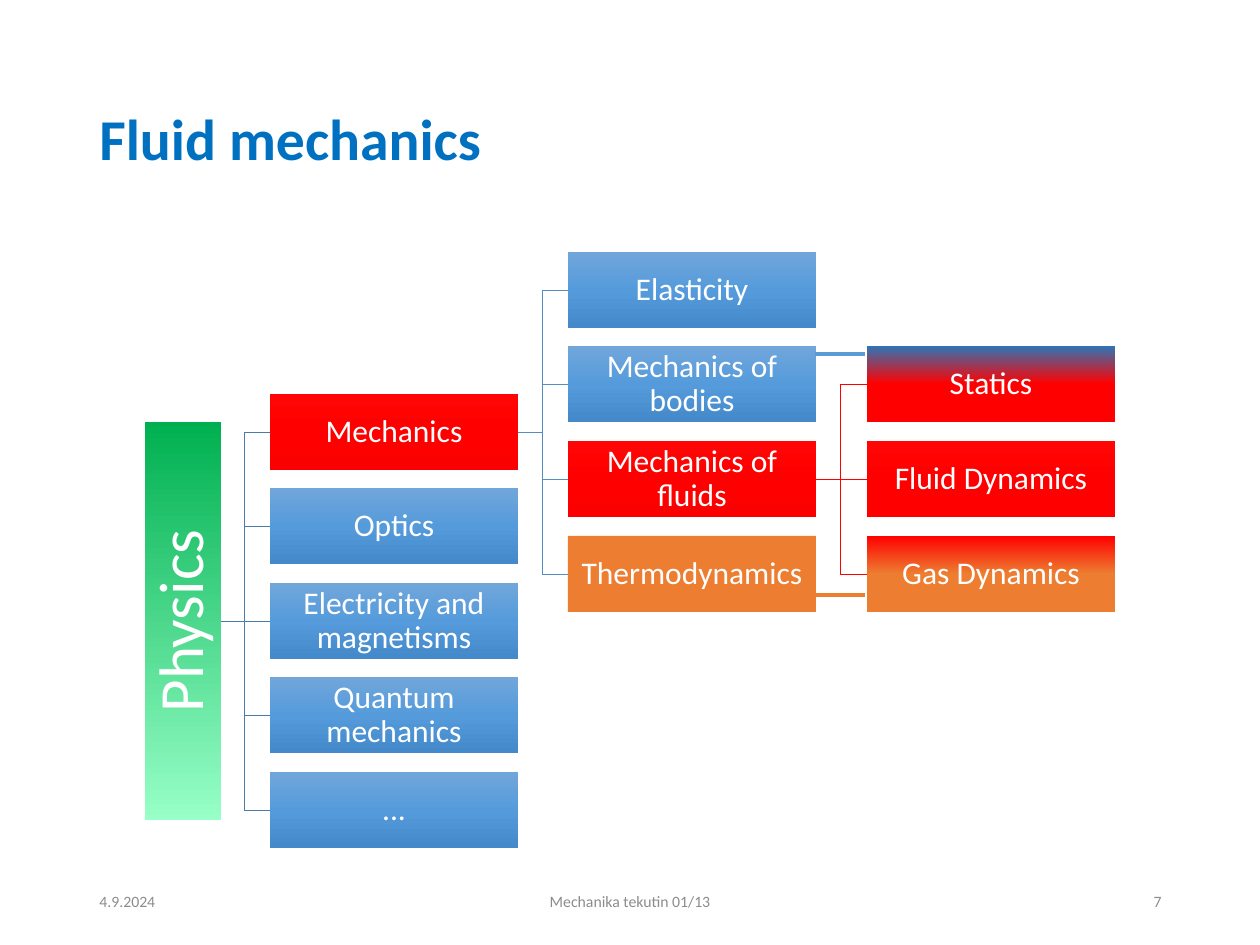
import pptx
import pptx.dml.color
import pptx.enum.shapes
import pptx.enum.text
import pptx.oxml.ns
import pptx.util
from lxml import etree

EMU_PER_PX = 914400 / 126
BOX_WIDTH, BOX_HEIGHT = 248, 76
BLUE = ["71A6DB", "559BDB", "448ACA"]
RED = ["FF0505", "FF0000", "FA0000"]
ORANGE = ["ED7D31"]
ALIGN = pptx.enum.text.PP_ALIGN


def px(length):
    return pptx.util.Emu(round(length * EMU_PER_PX))


def color(code):
    return pptx.dml.color.RGBColor.from_string(code)


def write(frame, text, size=18, ink="FFFFFF", bold=False, align=ALIGN.CENTER,
          spacing=0.9, inset=None):
    frame.word_wrap = True
    frame.vertical_anchor = pptx.enum.text.MSO_ANCHOR.MIDDLE
    if inset is not None:
        frame.margin_left = frame.margin_right = px(inset)
        frame.margin_top = frame.margin_bottom = px(inset)
    para = frame.paragraphs[0]
    para.alignment = align
    para.line_spacing = spacing
    span = para.add_run()
    span.text = text
    span.font.name = "Calibri"
    span.font.size = pptx.util.Pt(size)
    span.font.bold = bold
    span.font.color.rgb = color(ink)


def column_left(column):
    return 270 + 597 * column // 2


def row_top(row):
    return 252 + round(94.5 * row)


class TreePage:
    def __init__(self, page):
        self.page = page

    def text(self, left, top, width, height, text, **style):
        box = self.page.shapes.add_textbox(px(left), px(top), px(width), px(height))
        write(box.text_frame, text, **style)

    def box(self, left, top, width, height, colors, text, rotation=0, **style):
        box = self.page.shapes.add_shape(
            pptx.enum.shapes.MSO_SHAPE.RECTANGLE, px(left), px(top), px(width), px(height))
        box.shadow.inherit = False
        box.rotation = rotation
        box.line.fill.background()
        if len(colors) == 1:
            box.fill.solid()
            box.fill.fore_color.rgb = color(colors[0])
        else:
            self.shade(box, colors)
        write(box.text_frame, text, **style)

    def shade(self, box, colors):
        """Fill from top to bottom of the page with evenly spaced colors."""
        box.fill.gradient()
        name = pptx.oxml.ns.qn
        gradient = box.element.spPr.find(name("a:gradFill"))
        for child in list(gradient):
            gradient.remove(child)
        gradient.set("rotWithShape", "0")
        stops = etree.SubElement(gradient, name("a:gsLst"))
        for index, code in enumerate(colors):
            place = str(100000 * index // (len(colors) - 1))
            stop = etree.SubElement(stops, name("a:gs"), pos=place)
            etree.SubElement(stop, name("a:srgbClr"), val=code)
        etree.SubElement(gradient, name("a:lin"), ang="5400000", scaled="0")

    def line(self, x1, y1, x2, y2, ink, width):
        line = self.page.shapes.add_connector(
            pptx.enum.shapes.MSO_CONNECTOR.STRAIGHT, px(x1), px(y1), px(x2), px(y2))
        line.line.color.rgb = color(ink)
        line.line.width = pptx.util.Pt(width)
        etree.SubElement(line.element.spPr, pptx.oxml.ns.qn("a:effectLst"))

    def branch(self, x1, y1, x2, y2, ink):
        if y1 == y2:
            self.line(x1, y1, x2, y2, ink, 0.5)
            return
        middle = (x1 + x2) // 2
        builder = self.page.shapes.build_freeform(x1, y1, scale=EMU_PER_PX)
        builder.add_line_segments([(middle, y1), (middle, y2), (x2, y2)], close=False)
        elbow = builder.convert_to_shape()
        elbow.shadow.inherit = False
        elbow.fill.background()
        elbow.line.color.rgb = color(ink)
        elbow.line.width = pptx.util.Pt(0.5)


def main():
    deck = pptx.Presentation()
    deck.slide_width, deck.slide_height = px(1260), px(945)
    tree = TreePage(deck.slides.add_slide(deck.slide_layouts[6]))

    # Title and footer
    tree.text(87, 50, 1086, 183, "Fluid mechanics", size=33, ink="0070C0",
              bold=True, align=ALIGN.LEFT)
    for left, width, text, align in [
            (87, 284, "4.9.2024", ALIGN.LEFT),
            (417, 426, "Mechanika tekutin 01/13", ALIGN.CENTER),
            (890, 284, "7", ALIGN.RIGHT)]:
        tree.text(left, 876, width, 50, text, size=9, ink="8C8C8C", align=align, spacing=1.0)

    # Columns: first row, then the boxes from top to bottom
    columns = [
        (1.5, [("Mechanics", RED), ("Optics", BLUE), ("Electricity and magnetisms", BLUE),
               ("Quantum mechanics", BLUE), ("...", BLUE)]),
        (0, [("Elasticity", BLUE), ("Mechanics of bodies", BLUE),
             ("Mechanics of fluids", RED), ("Thermodynamics", ORANGE)]),
        (1, [("Statics", ["2E75B6", "FF0000", "FF0000"]),
             ("Fluid Dynamics", ["FF0505", "FF0000", "FC0000"]),
             ("Gas Dynamics", ["FF0000", "ED7D31", "ED7D31"])]),
    ]

    # Branches from each parent to its column
    parents = [(221, 3.5, "497CAB"),
               (column_left(0) + BOX_WIDTH, 1.5, "538DC1"),
               (column_left(1) + BOX_WIDTH, 2, "FF0000")]
    half = BOX_HEIGHT // 2
    for column, (start, parent_row, ink) in enumerate(parents):
        first_row, boxes = columns[column]
        for index in range(len(boxes)):
            tree.branch(start, row_top(parent_row) + half,
                        column_left(column), row_top(first_row + index) + half, ink)

    # Boxes
    tree.box(-16, 583, 398, BOX_HEIGHT, ["00B050", "97FFC7"], "Physics",
             rotation=270, size=36, inset=4)
    for column, (first_row, boxes) in enumerate(columns):
        for index, (text, colors) in enumerate(boxes):
            tree.box(column_left(column), row_top(first_row + index),
                     BOX_WIDTH, BOX_HEIGHT, colors, text, inset=1)

    # Side links into statics and gas dynamics
    for y, ink in [(354, "5B9BD5"), (595, "ED7D31")]:
        tree.line(865, y, 815, y, ink, 2)

    deck.save("out.pptx")


if __name__ == "__main__":
    main()
